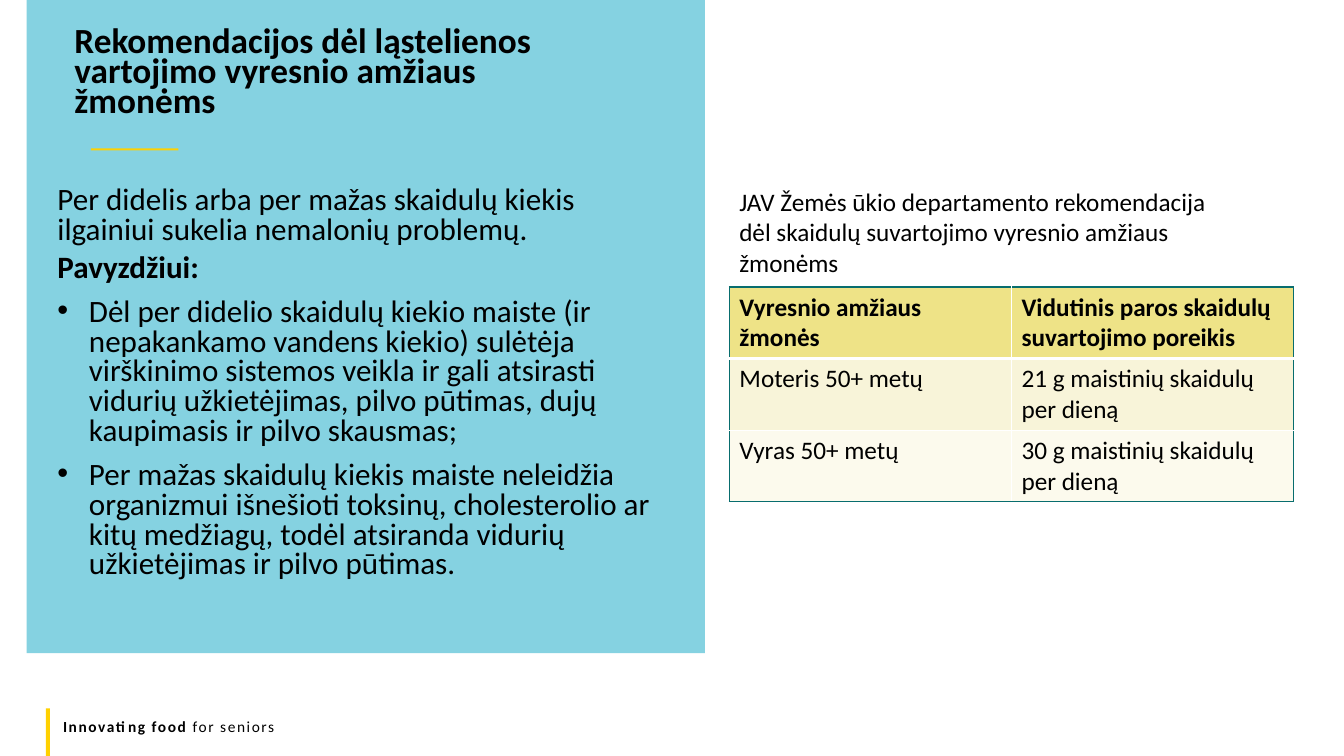
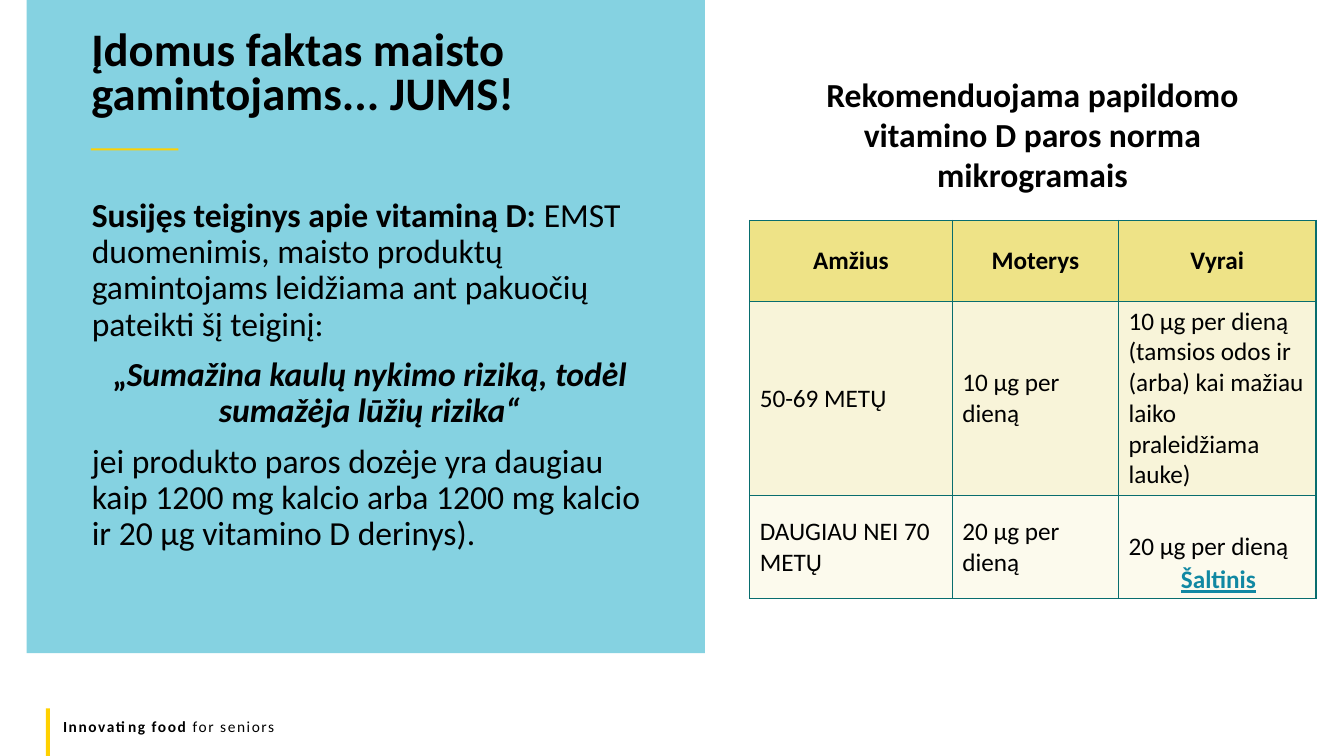
"""Build two slides with dietary advice for seniors."""
from dataclasses import dataclass
from typing import Optional

from lxml.etree import SubElement
from pptx import Presentation
from pptx.dml.color import RGBColor
from pptx.enum.shapes import MSO_SHAPE as Shape
from pptx.enum.text import MSO_ANCHOR as Anchor, MSO_AUTO_SIZE as AutoSize, PP_ALIGN as Align
from pptx.oxml.ns import qn
from pptx.util import Pt

BLACK = RGBColor(0x00, 0x00, 0x00)
WHITE = RGBColor(0xFF, 0xFF, 0xFF)
AQUA = RGBColor(0x85, 0xD2, 0xE1)
YELLOW = RGBColor(0xFF, 0xD1, 0x00)
TEAL = RGBColor(0x08, 0x6D, 0x6E)
SOURCE_BLUE = RGBColor(0x11, 0x88, 0xA3)
ROW_FILLS = (
    RGBColor(0xEE, 0xE3, 0x87),
    RGBColor(0xF8, 0xF4, 0xD9),
    RGBColor(0xFC, 0xFA, 0xED),
)
FONT = "Calibri"
TITLE_ONLY = 5


@dataclass(frozen=True)
class Box:
    """Place and size in points."""
    left: float
    top: float
    width: float
    height: float

    def lengths(self) -> tuple:
        """Return the four measures as lengths."""
        return tuple(Pt(v) for v in (self.left, self.top, self.width, self.height))


@dataclass(frozen=True)
class Span:
    """Stretch of text in one style."""
    text: str
    bold: bool = False
    italic: bool = False


@dataclass(frozen=True)
class Para:
    """Paragraph with its spacing and indents in points."""
    spans: tuple[Span, ...]
    size: float
    align: Align = Align.LEFT
    line: float = 1.0
    before: float = 0
    margin: float = 0
    bullet: bool = False
    color: RGBColor = BLACK
    underline: bool = False
    tracking: float = 0


@dataclass(frozen=True)
class TextBlock:
    """Paragraphs and the box that holds them."""
    box: Box
    paras: tuple[Para, ...]


@dataclass(frozen=True)
class Grid:
    """Table content, measures and rules."""
    left: float
    top: float
    columns: tuple[float, ...]
    heights: tuple[float, ...]
    rows: tuple[tuple[str, ...], ...]
    inner: RGBColor = TEAL
    header_rule: float = 1
    header_align: Align = Align.LEFT
    anchor: Anchor = Anchor.TOP


@dataclass(frozen=True)
class Topic:
    """Everything one slide says."""
    title: TextBlock
    texts: tuple[TextBlock, ...]
    grid: Grid
    source: Optional[TextBlock] = None


def plain(text: str, size: float, bold: bool = False, **style) -> Para:
    """Make a paragraph of a single span."""
    return Para((Span(text, bold),), size, **style)


def write(frame, paras: tuple[Para, ...]) -> None:
    """Write styled paragraphs into a text frame."""
    for index, para in enumerate(paras):
        paragraph = frame.add_paragraph() if index else frame.paragraphs[0]
        paragraph.alignment = para.align
        paragraph.line_spacing = para.line
        paragraph.space_before = Pt(para.before if index else 0)
        properties = paragraph._p.get_or_add_pPr()
        properties.set("marL", str(Pt(para.margin)))
        properties.set("indent", str(Pt(-para.margin if para.bullet else 0)))
        if para.bullet:
            SubElement(properties, qn("a:buFont")).set("typeface", "Arial")
            SubElement(properties, qn("a:buChar")).set("char", "•")
        font = paragraph.font
        font.name, font.size = FONT, Pt(para.size)
        font.color.rgb = para.color
        font.underline = para.underline
        runs = [paragraph.add_run() for _ in para.spans]
        for run, span in zip(runs, para.spans):
            run.text = span.text
            if para.tracking:
                run._r.get_or_add_rPr().set("spc", str(round(para.tracking * 100)))
        for trait in ("bold", "italic"):
            values = [getattr(span, trait) for span in para.spans]
            if len(set(values)) == 1:
                setattr(font, trait, values[0])
            else:
                for run, value in zip(runs, values):
                    setattr(run.font, trait, value)


def fill_frame(frame, paras: tuple[Para, ...]) -> None:
    """Set up a wrapping, top-anchored frame and write into it."""
    frame.word_wrap = True
    frame.auto_size = AutoSize.NONE
    frame.vertical_anchor = Anchor.TOP
    write(frame, paras)


def add_text(slide, block: TextBlock) -> None:
    """Add a text box."""
    fill_frame(slide.shapes.add_textbox(*block.box.lengths()).text_frame, block.paras)


def add_band(slide, box: Box, color: RGBColor) -> None:
    """Add a flat rectangle without outline."""
    band = slide.shapes.add_shape(Shape.RECTANGLE, *box.lengths())
    band.shadow.inherit = False
    band.fill.solid()
    band.fill.fore_color.rgb = color
    band.line.fill.background()


def set_border(cell, side: str, color: RGBColor, width: float) -> None:
    """Rule one side of a cell."""
    line = SubElement(cell._tc.get_or_add_tcPr(), qn(f"a:ln{side}"), w=str(Pt(width)))
    SubElement(SubElement(line, qn("a:solidFill")), qn("a:srgbClr"), val=str(color))


def add_grid(slide, grid: Grid) -> None:
    """Add a table with a teal frame."""
    box = Box(grid.left, grid.top, sum(grid.columns), sum(grid.heights))
    last_row, last_column = len(grid.rows) - 1, len(grid.columns) - 1
    table = slide.shapes.add_table(last_row + 1, last_column + 1, *box.lengths()).table
    table.horz_banding = False
    for column, width in zip(table.columns, grid.columns):
        column.width = Pt(width)
    for r, texts in enumerate(grid.rows):
        table.rows[r].height = Pt(grid.heights[r])
        for c, text in enumerate(texts):
            cell = table.cell(r, c)
            cell.vertical_anchor = grid.anchor
            edges = (("L", c == 0), ("R", c == last_column), ("T", r == 0), ("B", r == last_row))
            for side, outer in edges:
                width = grid.header_rule if (r, side) in ((0, "B"), (1, "T")) else 1
                set_border(cell, side, TEAL if outer else grid.inner, width)
            cell.fill.solid()
            cell.fill.fore_color.rgb = ROW_FILLS[r]
            align = Align.LEFT if r else grid.header_align
            write(cell.text_frame, (plain(text, 18, bold=r == 0, align=align),))


PANEL = Box(19, 0, 484.5, 466.5)
TITLE_RULE = Box(65, 106, 62.5, 1.5)
FOOTER_BAR = Box(32.8, 506, 2.9, 34)
FOOTER = TextBlock(
    Box(38, 509, 864, 21),
    (Para((Span("Innovating food ", True), Span("for seniors")), 11, tracking=1.1),),
)

TOPICS = (
    Topic(
        title=TextBlock(Box(46, 18, 370, 78.5), (
            plain("Rekomendacijos dėl ląstelienos vartojimo vyresnio amžiaus žmonėms",
                  25.2, True, line=0.7),
        )),
        texts=(
            TextBlock(Box(34, 129.6, 445.5, 304.5), (
                plain("Per didelis arba per mažas skaidulų kiekis ilgainiui sukelia "
                      "nemalonių problemų.", 22.2, line=0.8),
                plain("Pavyzdžiui:", 22.2, True, line=0.8, before=6),
                plain("Dėl per didelio skaidulų kiekio maiste (ir nepakankamo vandens kiekio) "
                      "sulėtėja virškinimo sistemos veikla ir gali atsirasti vidurių "
                      "užkietėjimas, pilvo pūtimas, dujų kaupimasis ir pilvo skausmas;",
                      22.2, line=0.8, before=10, margin=22.5, bullet=True),
                plain("Per mažas skaidulų kiekis maiste neleidžia organizmui išnešioti "
                      "toksinų, cholesterolio ar kitų medžiagų, todėl atsiranda vidurių "
                      "užkietėjimas ir pilvo pūtimas.",
                      22.2, line=0.8, before=10, margin=22.5, bullet=True),
            )),
            TextBlock(Box(521, 129.6, 368.5, 72.7), (
                plain("JAV Žemės ūkio departamento rekomendacija dėl skaidulų suvartojimo "
                      "vyresnio amžiaus žmonėms", 18),
            )),
        ),
        grid=Grid(
            521, 205, (201.5, 201.5), (51, 51, 51),
            (
                ("Vyresnio amžiaus žmonės", "Vidutinis paros skaidulų suvartojimo poreikis"),
                ("Moteris 50+ metų", "21 g maistinių skaidulų per dieną"),
                ("Vyras 50+ metų", "30 g maistinių skaidulų per dieną"),
            ),
            inner=WHITE, header_rule=3,
        ),
    ),
    Topic(
        title=TextBlock(Box(58, 18, 400, 78.5), (
            plain("Įdomus faktas maisto gamintojams... JUMS!", 33.3, True, line=0.8),
        )),
        texts=(
            TextBlock(Box(40.5, 138.2, 429, 304.5), (
                Para((Span("Susijęs teiginys apie vitaminą D: ", True),
                      Span("EMST duomenimis, maisto produktų gamintojams leidžiama ant "
                           "pakuočių pateikti šį teiginį:")),
                     24, line=0.9, margin=18),
                Para((Span("„", True),
                      Span("Sumažina kaulų nykimo riziką, todėl sumažėja lūžių rizika“",
                           True, True)),
                     24, Align.CENTER, line=0.9, before=10, margin=18),
                plain("jei produkto paros dozėje yra daugiau kaip 1200 mg kalcio arba "
                      "1200 mg kalcio ir 20 µg vitamino D derinys).",
                      24, line=0.9, before=10, margin=18),
            )),
            TextBlock(Box(545, 49, 385, 94.5), (
                plain("Rekomenduojama papildomo vitamino D paros norma mikrogramais",
                      24, True, align=Align.CENTER),
            )),
        ),
        grid=Grid(
            535.5, 157.5, (144.7, 118.8, 141), (57.6, 139, 73.5),
            (
                ("Amžius", "Moterys", "Vyrai"),
                ("50-69 METŲ", "10 µg per dieną",
                 "10 μg per dieną (tamsios odos ir (arba) kai mažiau laiko praleidžiama lauke)"),
                ("DAUGIAU NEI 70 METŲ", "20 µg per dieną", "20 µg per dieną"),
            ),
            header_align=Align.CENTER, anchor=Anchor.MIDDLE,
        ),
        source=TextBlock(Box(836.5, 399, 83, 29), (
            plain("Šaltinis", 18, True, color=SOURCE_BLUE, underline=True),
        )),
    ),
)


def add_topic(deck, topic: Topic) -> None:
    """Add one slide with its shared frame, texts and table."""
    slide = deck.slides.add_slide(deck.slide_layouts[TITLE_ONLY])
    add_band(slide, PANEL, AQUA)
    add_band(slide, TITLE_RULE, YELLOW)
    add_text(slide, FOOTER)
    add_band(slide, FOOTER_BAR, YELLOW)
    title = slide.shapes.title
    title.left, title.top, title.width, title.height = topic.title.box.lengths()
    fill_frame(title.text_frame, topic.title.paras)
    title.element.getparent().append(title.element)
    for block in topic.texts:
        add_text(slide, block)
    add_grid(slide, topic.grid)
    if topic.source:
        add_text(slide, topic.source)


def main() -> None:
    """Build and save the deck."""
    deck = Presentation()
    deck.slide_width, deck.slide_height = Pt(960), Pt(540)
    for topic in TOPICS:
        add_topic(deck, topic)
    deck.save("out.pptx")


if __name__ == "__main__":
    main()
